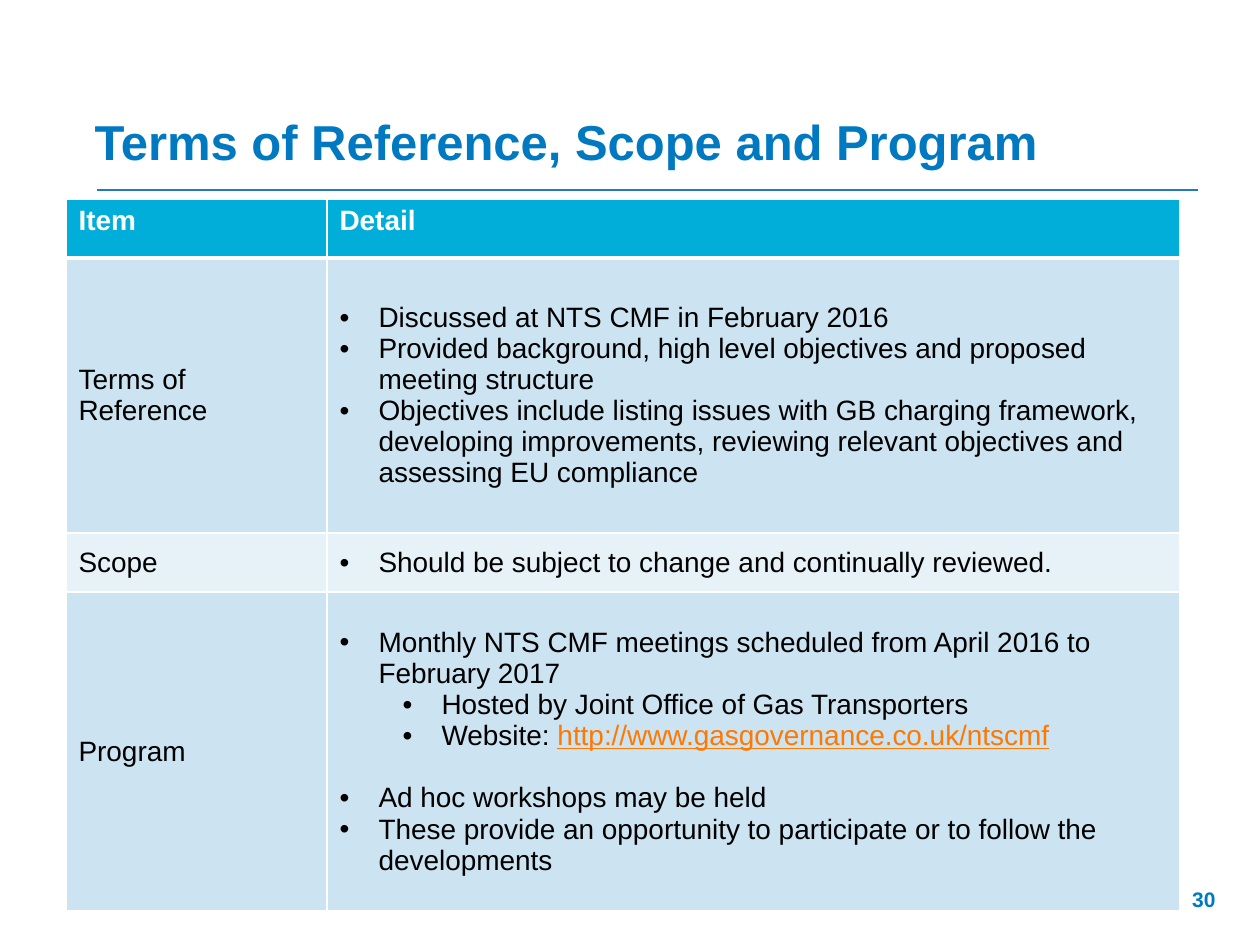
from lxml.etree import SubElement
from pptx import Presentation
from pptx.dml.color import RGBColor
from pptx.enum.shapes import MSO_CONNECTOR
from pptx.enum.text import MSO_ANCHOR as Anchor, PP_ALIGN as Align
from pptx.oxml.ns import qn
from pptx.util import Emu, Pt

PX = 914400 // 126
COLORS = {"title": "0079C1", "rule": "2478C0", "header": "00AED9", "band": "CCE3F1",
          "light": "E7F2F8", "white": "FFFFFF", "text": "000000", "link": "FF7800"}

# Detail entries: level, text, optional link, optional space before in points
ROWS = [
    ("Terms of Reference", [
        (0, "Discussed at NTS CMF in February 2016"),
        (0, "Provided background, high level objectives and proposed meeting structure"),
        (0, "Objectives include listing issues with GB charging framework, developing "
            "improvements, reviewing relevant objectives and assessing EU compliance")]),
    ("Scope", [(0, "Should be subject to change and continually reviewed.")]),
    ("Program", [
        (0, "Monthly NTS CMF meetings scheduled from April 2016 to February 2017"),
        (1, "Hosted by Joint Office of Gas Transporters"),
        (1, "Website: ", "http://www.gasgovernance.co.uk/ntscmf"),
        (0, "Ad hoc workshops may be held", "", 18),
        (0, "These provide an opportunity to participate or to follow the developments")]),
]


def rgb(name):
    return RGBColor.from_string(COLORS[name])


class Deck:
    font = "Arial"

    def __init__(self, width, height):
        self.prs = Presentation()
        self.prs.slide_width, self.prs.slide_height = Emu(width * PX), Emu(height * PX)
        self.slide = self.prs.slides.add_slide(self.prs.slide_layouts[5])

    def style(self, p, size, color, bold=False):
        for r in p.runs:
            r.font.name, r.font.size, r.font.bold = self.font, Pt(size), bold
            r.font.color.rgb = rgb(color)

    def title(self, text, x, y, w, h):
        sp = self.slide.shapes.title
        sp.left, sp.top, sp.width, sp.height = (Emu(v * PX) for v in (x, y, w, h))
        tf = sp.text_frame
        tf.text = text
        tf.vertical_anchor = Anchor.BOTTOM
        tf.paragraphs[0].alignment = Align.LEFT
        self.style(tf.paragraphs[0], 28, "title", True)

    def rule(self, x1, x2, y):
        line = self.slide.shapes.add_connector(
            MSO_CONNECTOR.STRAIGHT, *(Emu(v * PX) for v in (x1, y, x2, y)))
        line.line.color.rgb, line.line.width = rgb("rule"), Pt(1.5)
        SubElement(line._element.spPr, qn("a:effectLst"))

    def label(self, text, x, y, w, h):
        box = self.slide.shapes.add_textbox(*(Emu(v * PX) for v in (x, y, w, h)))
        tf = box.text_frame
        tf.word_wrap = True
        tf.text = text
        tf.paragraphs[0].alignment = Align.RIGHT
        self.style(tf.paragraphs[0], 12, "title", True)

    def table(self, x, y, cols, rows):
        frame = self.slide.shapes.add_table(
            len(rows), len(cols), *(Emu(v * PX) for v in (x, y, sum(cols), sum(rows))))
        for col, w in zip(frame.table.columns, cols):
            col.width = Emu(w * PX)
        for row, h in zip(frame.table.rows, rows):
            row.height = Emu(h * PX)
        return frame.table

    def cell(self, cell, fill, top=1, bottom=1, anchor=Anchor.MIDDLE):
        cell.vertical_anchor = anchor
        tcPr = cell._tc.get_or_add_tcPr()
        for side, width in (("L", 1), ("R", 1), ("T", top), ("B", bottom)):
            ln = SubElement(tcPr, qn(f"a:ln{side}"), w=str(Pt(width)))
            solid = SubElement(ln, qn("a:solidFill"))
            SubElement(solid, qn("a:srgbClr"), val=COLORS["white"])
        cell.fill.solid()
        cell.fill.fore_color.rgb = rgb(fill)

    def cell_text(self, cell, text, color="text", bold=False):
        cell.text = text
        self.style(cell.text_frame.paragraphs[0], 16, color, bold)

    def bullets(self, cell, entries):
        tf = cell.text_frame
        for i, (level, text, *extra) in enumerate(entries):
            p = tf.add_paragraph() if i else tf.paragraphs[0]
            p.text, p.level = text, level
            link, gap = (extra + ["", 0][len(extra):])
            pPr = p._p.get_or_add_pPr()
            pPr.set("marL", str((39 + 63 * level) * PX))
            pPr.set("indent", str(-39 * PX))
            if gap:
                p.space_before = Pt(gap)
            SubElement(pPr, qn("a:buFont"), typeface=self.font)
            SubElement(pPr, qn("a:buChar"), char="•")
            self.style(p, 16, "text")
            if link:
                r = p.add_run()
                r.text = link
                r.font.name, r.font.size, r.font.underline = self.font, Pt(16), True
                r.font.color.rgb = rgb("link")


def main():
    deck = Deck(1260, 945)

    # Heading
    deck.rule(97, 1198, 190)
    deck.title("Terms of Reference, Scope and Program", 82, 105, 1115, 72)

    # Table
    table = deck.table(66, 199, [261, 853], [59, 275, 59, 319])
    for col, text in enumerate(("Item", "Detail")):
        head = table.cell(0, col)
        deck.cell_text(head, text, "white", True)
        deck.cell(head, "header", bottom=3, anchor=Anchor.TOP)
    for row, (item, details) in enumerate(ROWS, 1):
        name, detail = table.cell(row, 0), table.cell(row, 1)
        deck.cell_text(name, item)
        deck.bullets(detail, details)
        for cell in (name, detail):
            deck.cell(cell, "band" if row % 2 else "light", top=3 if row == 1 else 1)

    # Page number
    deck.label("30", 935, 880, 293, 50)

    deck.prs.save("out.pptx")


if __name__ == "__main__":
    main()
